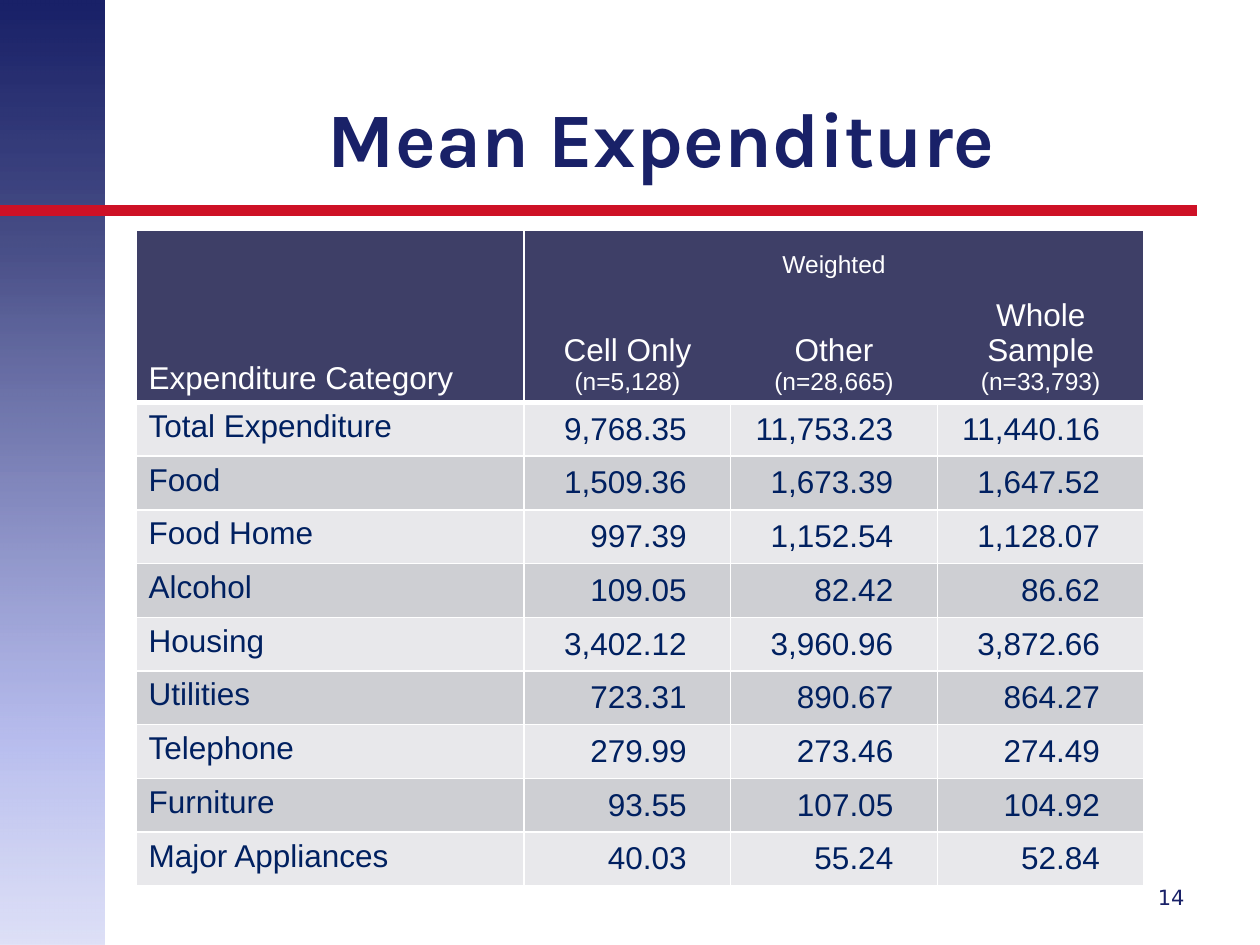
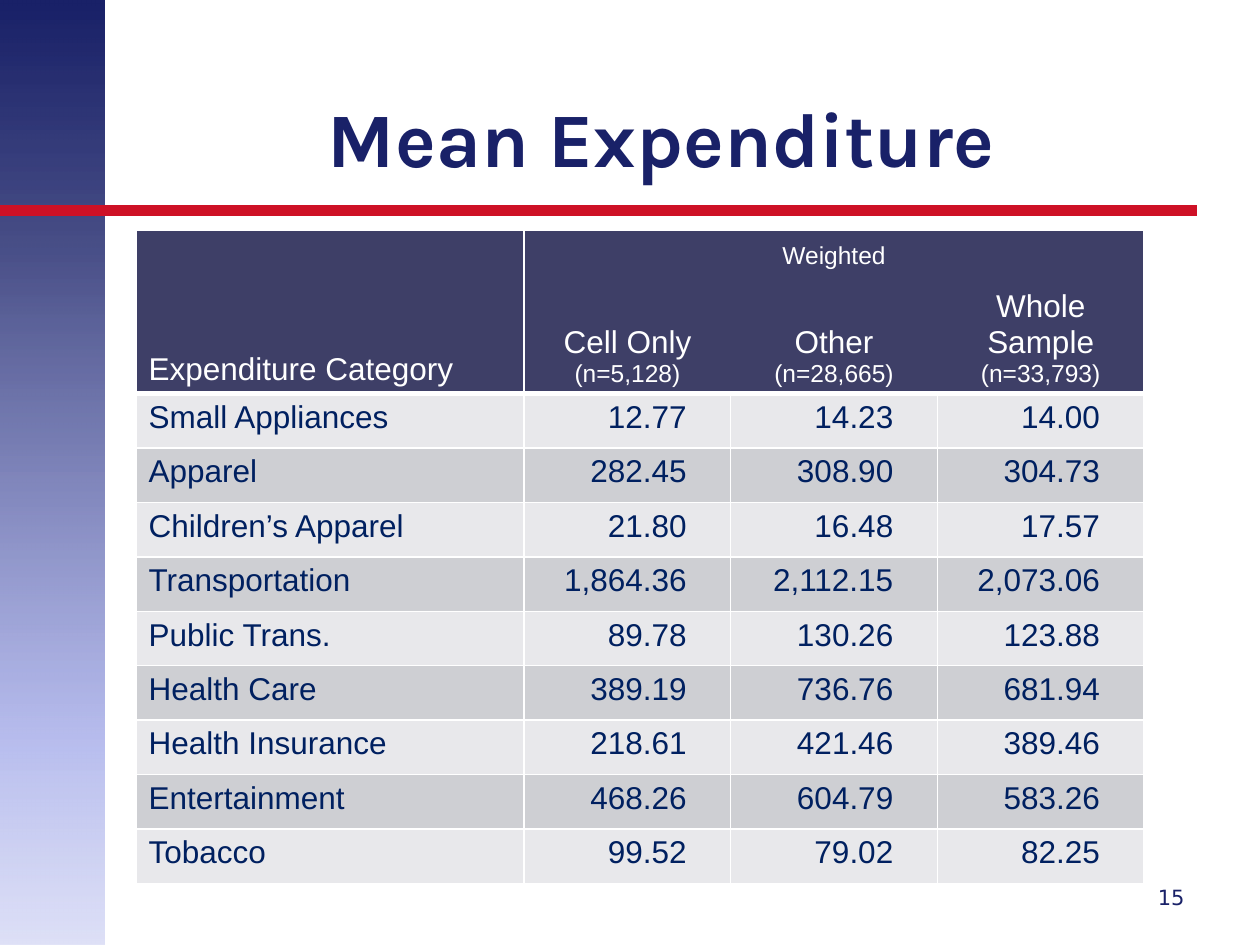
import pptx
import pptx.util
import pptx.dml.color
import pptx.enum.shapes
import pptx.enum.text
import pptx.oxml
import pptx.oxml.ns
from lxml import etree

Inches, Pt = pptx.util.Inches, pptx.util.Pt
ALIGN, ANCHOR = pptx.enum.text.PP_ALIGN, pptx.enum.text.MSO_ANCHOR
NS = pptx.oxml.ns.nsdecls("a")

NAVY, RED, WHITE = "192168", "CE1126", "FFFFFF"
HEADER, BODY_TEXT = "3E3F67", "002060"
STRIPES = ("E8E8EB", "CECFD3")
BAND_STOPS = ((0, NAVY, 100), (26, NAVY, 79), (78, "969EE6", 68), (100, "CACEF2", 61))
COL_WIDTHS = (3.08, 1.64, 1.64, 1.64)
SAMPLES = (("Cell Only", "(n=5,128)"), ("Other", "(n=28,665)"),
           ("Whole Sample", "(n=33,793)"))
THIN = {"L": 1, "R": 1, "T": 1, "B": 1}

SLIDES = (
    {"number": 14, "header_heights": (0.43, 0.86), "body_height": 3.84,
     "anchor": ANCHOR.MIDDLE, "rows": (
         ("Total Expenditure", "9,768.35", "11,753.23", "11,440.16"),
         ("Food", "1,509.36", "1,673.39", "1,647.52"),
         ("Food Home", "997.39", "1,152.54", "1,128.07"),
         ("Alcohol", "109.05", "82.42", "86.62"),
         ("Housing", "3,402.12", "3,960.96", "3,872.66"),
         ("Utilities", "723.31", "890.67", "864.27"),
         ("Telephone", "279.99", "273.46", "274.49"),
         ("Furniture", "93.55", "107.05", "104.92"),
         ("Major Appliances", "40.03", "55.24", "52.84"))},
    {"number": 15, "header_heights": (0.36, 0.86), "body_height": 3.89,
     "anchor": ANCHOR.TOP, "rows": (
         ("Small Appliances", "12.77", "14.23", "14.00"),
         ("Apparel", "282.45", "308.90", "304.73"),
         ("Children’s Apparel", "21.80", "16.48", "17.57"),
         ("Transportation", "1,864.36", "2,112.15", "2,073.06"),
         ("Public Trans.", "89.78", "130.26", "123.88"),
         ("Health Care", "389.19", "736.76", "681.94"),
         ("Health Insurance", "218.61", "421.46", "389.46"),
         ("Entertainment", "468.26", "604.79", "583.26"),
         ("Tobacco", "99.52", "79.02", "82.25"))},
)


def rgb(hex_color):
    return pptx.dml.color.RGBColor.from_string(hex_color)


def set_borders(cell, widths):
    """Draw white borders of the given point widths; sides not named get no line."""
    tc_pr = cell._tc.get_or_add_tcPr()
    for side in "LRTB":
        width = widths.get(side)
        paint = (f'<a:solidFill><a:srgbClr val="{WHITE}"/></a:solidFill>'
                 if width else "<a:noFill/>")
        tc_pr.append(pptx.oxml.parse_xml(
            f'<a:ln{side} {NS} w="{Pt(width or 0)}">{paint}</a:ln{side}>'))


class Deck:
    def __init__(self, prs):
        self.prs = prs
        self.s = None

    def new_slide(self):
        self.s = self.prs.slides.add_slide(self.prs.slide_layouts[5])

    def add_lines(self, tf, lines, align, **font):
        """Add (text, size) lines, one paragraph each."""
        color = rgb(font.pop("color"))
        for i, (text, size) in enumerate(lines):
            p = tf.paragraphs[0] if i == 0 else tf.add_paragraph()
            p.alignment = align
            r = p.add_run()
            r.text = text
            r.font.color.rgb = color
            for name, value in {"size": Pt(size), **font}.items():
                setattr(r.font, name, value)

    def band(self):
        sp = self.s.shapes.add_shape(pptx.enum.shapes.MSO_SHAPE.RECTANGLE,
                                     0, 0, Inches(0.83), Inches(7.5))
        sp.shadow.inherit = False
        sp.line.fill.background()
        sp.fill.gradient()
        sp.fill.gradient_angle = 270
        stops = sp._element.spPr.find(".//" + pptx.oxml.ns.qn("a:gsLst"))
        for stop in list(stops):
            stops.remove(stop)
        for pos, color, alpha in BAND_STOPS:
            stops.append(pptx.oxml.parse_xml(
                f'<a:gs {NS} pos="{pos * 1000}"><a:srgbClr val="{color}">'
                f'<a:alpha val="{alpha * 1000}"/></a:srgbClr></a:gs>'))

    def rule(self):
        line = self.s.shapes.add_connector(pptx.enum.shapes.MSO_CONNECTOR.STRAIGHT,
                                           0, Inches(1.67), Inches(9.5), Inches(1.67))
        line.line.color.rgb = rgb(RED)
        line.line.width = Pt(6)
        etree.SubElement(line._element.spPr, pptx.oxml.ns.qn("a:effectLst"))

    def title(self, text):
        sp = self.s.shapes.title
        sp.left, sp.top, sp.width, sp.height = map(Inches, (1, 0.3, 8.5, 1.2))
        tf = sp.text_frame
        tf.vertical_anchor = ANCHOR.BOTTOM
        self.add_lines(tf, [(text, 44)], ALIGN.CENTER, name="Karla", color=NAVY, bold=True)

    def page_number(self, number):
        sp = self.s.shapes.add_textbox(*map(Inches, (8.75, 6.92, 0.75, 0.4)))
        tf = sp.text_frame
        tf.word_wrap = True
        tf.vertical_anchor = ANCHOR.MIDDLE
        self.add_lines(tf, [(str(number), 12)], ALIGN.RIGHT, name="DejaVu Sans", color=NAVY)

    def cell(self, cell, lines, align, anchor, color, fill, borders):
        set_borders(cell, borders)
        cell.fill.solid()
        cell.fill.fore_color.rgb = rgb(fill)
        cell.vertical_anchor = anchor
        self.add_lines(cell.text_frame, lines, align, name="Arial", color=color)

    def header(self, table):
        def fill_in(row, col, lines, align, borders):
            self.cell(table.cell(row, col), lines, align, ANCHOR.BOTTOM,
                      WHITE, HEADER, borders)

        table.cell(0, 0).merge(table.cell(1, 0))
        table.cell(0, 1).merge(table.cell(0, 3))
        fill_in(0, 0, [("Expenditure Category", 18)], ALIGN.LEFT, {**THIN, "B": 3})
        fill_in(1, 0, [], ALIGN.LEFT, {**THIN, "B": 3})
        fill_in(0, 1, [("Weighted", 14)], ALIGN.CENTER, {"L": 1, "T": 1, "R": 1})
        for col, (name, count) in enumerate(SAMPLES, 1):
            sides = {1: {"L": 1}, 3: {"R": 1}}.get(col, {})
            fill_in(1, col, [(name, 18), (count, 14)], ALIGN.CENTER, {**sides, "B": 3})

    def expenditure_table(self, rows, header_heights, body_height, anchor):
        heights = [*header_heights, *[body_height / len(rows)] * len(rows)]
        table = self.s.shapes.add_table(
            len(heights), len(COL_WIDTHS), Inches(1.08), Inches(1.83),
            Inches(sum(COL_WIDTHS)), Inches(sum(heights))).table
        table.first_row = table.horz_banding = False
        for column, width in zip(table.columns, COL_WIDTHS):
            column.width = Inches(width)
        for row, height in zip(table.rows, heights):
            row.height = Inches(height)
        self.header(table)
        for i, values in enumerate(rows):
            borders = {**THIN, "T": 3} if i == 0 else THIN
            for col, text in enumerate(values):
                cell = table.cell(i + 2, col)
                if col:
                    cell.margin_left, cell.margin_right = 0, Inches(0.35)
                self.cell(cell, [(text, 18)], ALIGN.RIGHT if col else ALIGN.LEFT,
                          anchor if col else ANCHOR.TOP,
                          BODY_TEXT, STRIPES[i % 2], borders)


def main():
    prs = pptx.Presentation()
    prs.slide_width, prs.slide_height = Inches(10), Inches(7.5)
    deck = Deck(prs)
    for content in SLIDES:
        deck.new_slide()
        deck.band()
        deck.rule()
        deck.title("Mean Expenditure")
        deck.page_number(content["number"])
        deck.expenditure_table(content["rows"], content["header_heights"],
                               content["body_height"], content["anchor"])
    prs.save("out.pptx")


if __name__ == "__main__":
    main()
